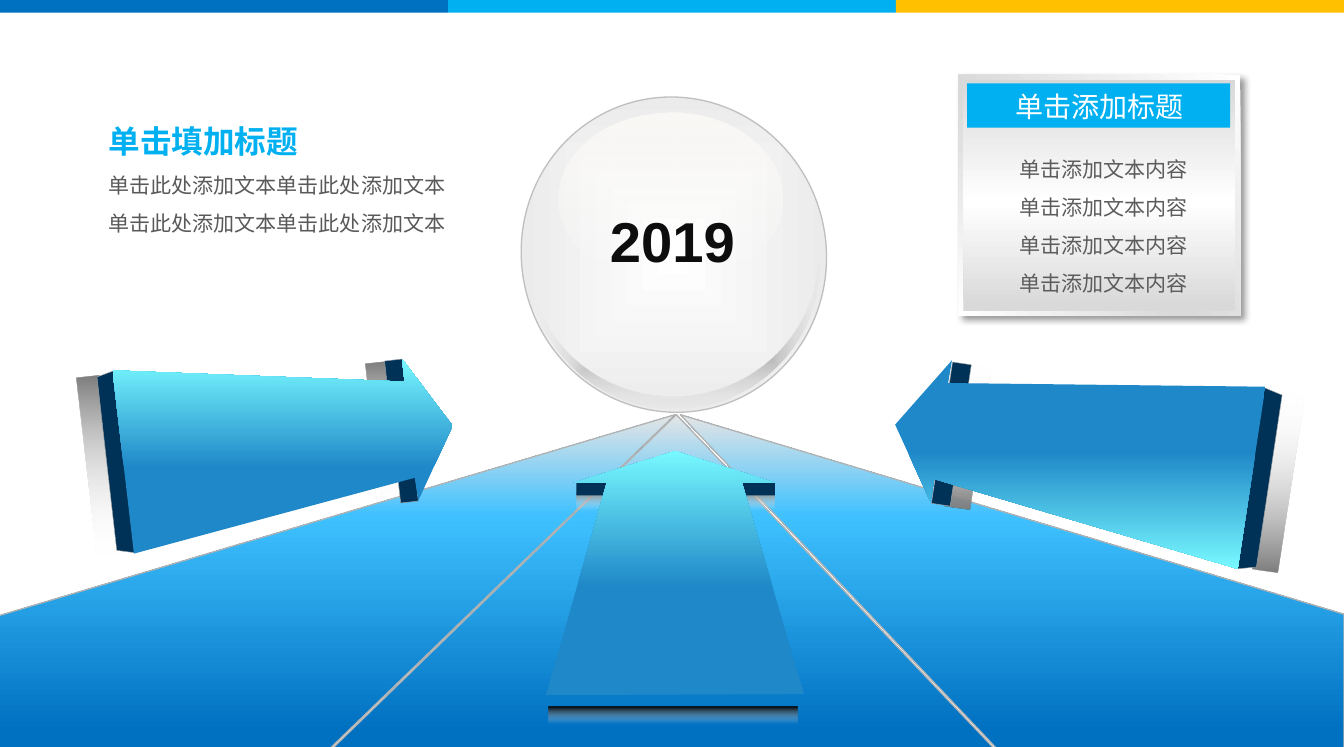
from math import cos, radians, sin

from lxml.etree import SubElement
from pptx import Presentation
from pptx.dml.color import RGBColor
from pptx.enum.shapes import MSO_SHAPE
from pptx.enum.text import MSO_AUTO_SIZE, PP_ALIGN
from pptx.oxml.ns import qn
from pptx.util import Pt

W, H = 765.4, 425.5
CJK = "Noto Sans CJK SC"
COLORS = {
    "blue": "0070C0", "sky": "00B0F0", "amber": "FFC000", "navy": "003258",
    "white": "FFFFFF", "black": "000000", "gray": "808080", "silver": "D9D9D9",
    "floor_mid": "3FC1FF", "floor_top": "E5E5E5", "floor_line": "B2B2B2",
    "ball": "E6E6E6", "ball_line": "BFBFBF", "gloss": "FFFCF9",
    "arrow": "1F88C8", "arrow_tip": "78F8FF", "side_line": "A0A2A4",
    "ink": "0D0D0D", "card_text": "5C5C5C", "body": "595959",
}
# Gradient stops: position, colour, opacity (all in percent)
FLOOR = [(6, "blue", 100), (70, "floor_mid", 100), (100, "floor_top", 100)]
BALL = [(0, "white", 100), (100, "ball", 100)]
GLOSS = [(0, "white", 0), (100, "gloss", 77)]
CRESCENT = [(24, "black", 24), (100, "white", 0)]
ARROW = [(44, "arrow", 100), (100, "arrow_tip", 100)]
GRAY_FADE = [(1, "gray", 100), (100, "white", 0)]
BLACK_FADE = [(1, "black", 100), (100, "white", 0)]
CARD_EDGE = [(0, "white", 100), (57, "silver", 100), (100, "white", 100)]
CARD_FACE = [(2, "silver", 100), (47, "white", 100), (100, "silver", 100)]


def rgb(name):
    return RGBColor.from_string(COLORS[name])


def add_color(parent, name, opacity):
    clr = SubElement(parent, qn("a:srgbClr"), val=COLORS[name])
    SubElement(clr, qn("a:alpha"), val=str(opacity * 1000))


class Canvas:
    def __init__(self, prs):
        self.s = prs.slides.add_slide(prs.slide_layouts[6])

    def style(self, sp, fill, angle, line):
        """Fill with a colour name or gradient stops; angle None radiates from the centre."""
        sp.shadow.inherit = False
        if isinstance(fill, str):
            sp.fill.solid()
            sp.fill.fore_color.rgb = rgb(fill)
        else:
            sp.fill.gradient()
            grad = sp._element.spPr.find(qn("a:gradFill"))
            grad.clear()
            stops = SubElement(grad, qn("a:gsLst"))
            for pos, name, opacity in fill:
                add_color(SubElement(stops, qn("a:gs"), pos=str(pos * 1000)), name, opacity)
            if angle is None:
                path = SubElement(grad, qn("a:path"), {"path": "shape"})
                SubElement(path, qn("a:fillToRect"), {side: "50000" for side in "ltrb"})
            else:
                SubElement(grad, qn("a:lin"), ang=str(angle * 60000), scaled="0")
        if line:
            name, width = line
            sp.line.color.rgb = rgb(name)
            sp.line.width = Pt(width)
        else:
            sp.line.fill.background()
        return sp

    def shape(self, kind, box, fill, angle=None, line=None, rot=0, flip=None):
        sp = self.s.shapes.add_shape(kind, *map(Pt, box))
        sp.rotation = rot
        if flip:
            sp._element.spPr.xfrm.set(flip, "1")
        return self.style(sp, fill, angle, line)

    def rect(self, *box, fill, angle=None):
        return self.shape(MSO_SHAPE.RECTANGLE, box, fill, angle)

    def polygon(self, points, fill, angle, line=None):
        start, *rest = [(Pt(x), Pt(y)) for x, y in points]
        fb = self.s.shapes.build_freeform(*start, scale=1.0)
        fb.add_line_segments(rest, close=True)
        return self.style(fb.convert_to_shape(), fill, angle, line)

    def tilted_fade(self, box, rot, angle):
        """Turned bar whose fade stays vertical on the slide."""
        x, y, w, h = box
        c, n = cos(radians(rot)), sin(radians(rot))
        corners = [(-w / 2, -h / 2), (w / 2, -h / 2), (w / 2, h / 2), (-w / 2, h / 2)]
        points = [(x + w / 2 + dx * c - dy * n, y + h / 2 + dx * n + dy * c)
                  for dx, dy in corners]
        self.polygon(points, GRAY_FADE, angle)

    def side_arrow(self, fades, notch, end, rot, flip, points, fade_angle, arrow_angle):
        for box in fades:
            self.tilted_fade(box, rot, fade_angle)
        edge = ("side_line", 0.25)
        self.shape(MSO_SHAPE.RECTANGLE, notch, "navy", line=edge, rot=rot)
        self.shape(MSO_SHAPE.TRAPEZOID, end, "navy", line=edge, rot=rot, flip=flip)
        self.polygon(points, ARROW, arrow_angle)

    def drop_shadow(self, sp):
        effects = sp._element.spPr.find(qn("a:effectLst"))
        shadow = SubElement(effects, qn("a:outerShdw"), blurRad=str(Pt(4)), dist=str(Pt(3)),
                            dir=str(45 * 60000), algn="tl", rotWithShape="0")
        add_color(shadow, "black", 40)

    def text(self, box, lines, align=PP_ALIGN.CENTER, spacing=None, wrap=True, font=CJK):
        """Each line is (text, size, colour, bold)."""
        tf = self.s.shapes.add_textbox(*map(Pt, box)).text_frame
        tf.word_wrap = wrap
        tf.auto_size = MSO_AUTO_SIZE.SHAPE_TO_FIT_TEXT
        for i, (words, size, color, bold) in enumerate(lines):
            p = tf.add_paragraph() if i else tf.paragraphs[0]
            p.text = words
            p.alignment = align
            if spacing:
                p.line_spacing = spacing
            f = p.font
            f.size, f.bold, f.name = Pt(size), bold, font
            f.color.rgb = rgb(color)
            SubElement(f._element, qn("a:ea"), typeface=font)


def main():
    prs = Presentation()
    prs.slide_width, prs.slide_height = Pt(W), Pt(H)
    c = Canvas(prs)

    # Road
    base, horizon = 428.4, 236.2
    for points in (
        [(-2.9, 351.4), (-2.9, base), (185.8, base), (384.5, horizon)],
        [(187.2, base), (568.1, base), (385.2, horizon)],
        [(569.5, base), (W, base), (W, 349.9), (387.4, horizon)],
    ):
        c.polygon(points, FLOOR, 270, ("floor_line", 0.75))

    # Ball
    c.shape(MSO_SHAPE.OVAL, (293.8, 58.3, 180, 173.5), BALL,
            line=("ball_line", 0.75), rot=75.6, flip="flipH")
    c.shape(MSO_SHAPE.OVAL, (318.2, 64.1, 127.4, 97.9), GLOSS, 270, flip="flipH")
    moon = c.shape(MSO_SHAPE.MOON, (347.8, 109.4, 81.4, 164.9), CRESCENT,
                   rot=83.8, flip="flipH")
    moon.adjustments[0] = 0.088
    c.text((339.8, 113.8, 86.4, 46.1), [("2019", 32, "ink", True)], wrap=False, font="Arial")

    # Centre arrow
    c.rect(328.3, 280.8, 113, 9.4, fill=GRAY_FADE, angle=90)
    c.rect(312.5, 402.5, 141.8, 9.4, fill=BLACK_FADE, angle=90)
    c.rect(328.3, 275, 113, 7.2, fill="navy")
    c.polygon([(457.9, 395.3), (311, 396), (345.6, 275), (326.9, 275), (384.5, 257),
               (441.4, 275), (422.6, 275)], ARROW, 270)

    c.side_arrow(
        fades=[(178.6, 240.5, 81.4, 13), (5, 258.5, 101.5, 13)],
        notch=(187.9, 240.5, 81.4, 10.1), end=(13.7, 258.5, 104.4, 10.1),
        rot=83.5, flip="flipV", fade_angle=90, arrow_angle=270,
        points=[(76.3, 315.4), (64.1, 211), (230.4, 217.4), (229, 204.5),
                (257.8, 242.6), (238.3, 285.1), (236.2, 272.2)])
    c.side_arrow(
        fades=[(510.5, 241.9, 81.4, 14.4), (677.5, 267.8, 101.5, 14.4)],
        notch=(501.1, 241.9, 81.4, 10.8), end=(665.3, 267.8, 104.4, 10.8),
        rot=98.5, flip=None, fade_angle=270, arrow_angle=90,
        points=[(704.9, 324), (720.7, 220.3), (540, 218.2), (542.2, 205.2),
                (509.8, 241.9), (529.9, 285.8), (532.1, 272.9)])

    # Card
    c.drop_shadow(c.rect(545.8, 42.5, 160.6, 137.5, fill=CARD_EDGE, angle=135))
    c.rect(548.6, 45.4, 154.8, 131.8, fill=CARD_FACE, angle=270)
    c.rect(550.8, 47.5, 149.8, 25.2, fill="sky")
    c.text((569.5, 47.5, 113.8, 27.4), [("单击添加标题", 16, "white", False)], wrap=False)
    c.text((563, 78.5, 131, 94.3), [("单击添加文本内容", 12, "card_text", False)] * 4, spacing=1.5)

    # Top stripe
    for i, color in enumerate(("blue", "sky", "amber")):
        c.rect(i * W / 3, 0, W / 3, 7.2, fill=color)

    body = ("单击此处添加文本单击此处添加文本", 12, "body", False)
    c.text((54.7, 55.4, 254.9, 83.5), [("单击填加标题", 18, "sky", True), body, body],
           align=PP_ALIGN.LEFT, spacing=1.5)

    prs.save("out.pptx")


if __name__ == "__main__":
    main()
